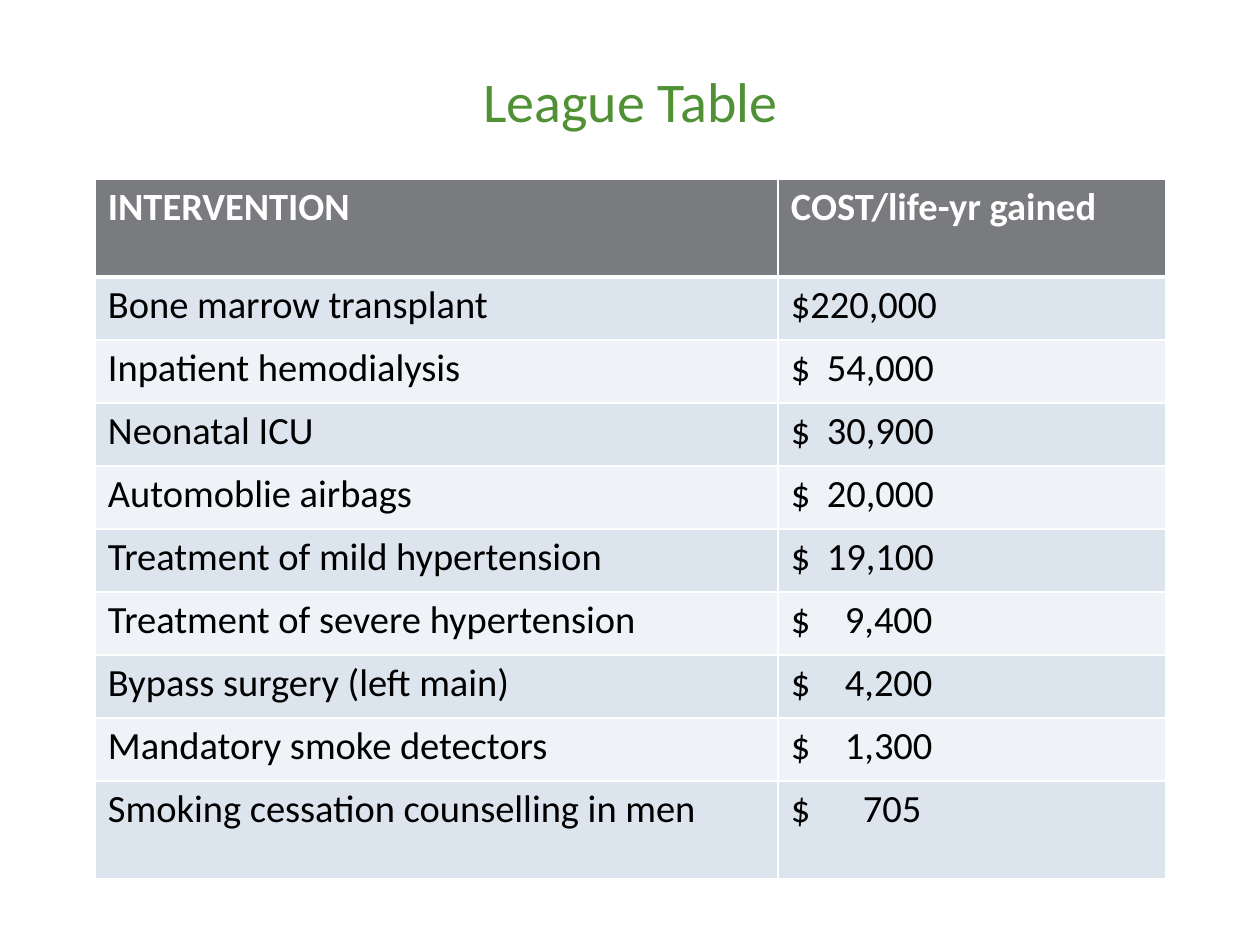
"""Build the League Table slide of cost per life-year gained."""
import pptx
import pptx.dml.color
import pptx.enum.text
import pptx.oxml
import pptx.oxml.ns
import pptx.util

SCALE = 914400 / 126
NS = pptx.oxml.ns.nsdecls("a")


def px(n):
    return pptx.util.Emu(round(n * SCALE))


def write(tf, text, size=22, color="000000", bold=False, align="LEFT", tab=None):
    p = tf.paragraphs[0]
    p.alignment = pptx.enum.text.PP_ALIGN[align]
    if tab:
        p._p.get_or_add_pPr().append(pptx.oxml.parse_xml(
            f'<a:tabLst {NS}><a:tab pos="{px(tab)}" algn="l"/></a:tabLst>'))
    r = p.add_run()
    r.text = text
    r.font.name = "Calibri"
    r.font.size = pptx.util.Pt(size)
    r.font.bold = bold
    r.font.color.rgb = pptx.dml.color.RGBColor.from_string(color)


rows = [
    ("INTERVENTION", "COST/life-yr gained"),
    ("Bone marrow transplant", "220,000"),
    ("Inpatient hemodialysis", "54,000"),
    ("Neonatal ICU", "30,900"),
    ("Automoblie airbags", "20,000"),
    ("Treatment of mild hypertension", "19,100"),
    ("Treatment of severe hypertension", "9,400"),
    ("Bypass surgery (left main)", "4,200"),
    ("Mandatory smoke detectors", "1,300"),
    ("Smoking cessation counselling in men", "705"),
]
last = len(rows) - 1

prs = pptx.Presentation()
prs.slide_width, prs.slide_height = px(1260), px(945)
s = prs.slides.add_slide(prs.slide_layouts[5])

title = s.shapes.title
title.left, title.top, title.width, title.height = px(95), px(21), px(1071), px(158)
title.text_frame.vertical_anchor = pptx.enum.text.MSO_ANCHOR.MIDDLE
write(title.text_frame, "League Table", size=32, color="519136", align="CENTER")

table = s.shapes.add_table(len(rows), 2, px(95), px(179), px(1071), px(700)).table
for column, width in zip(table.columns, (683, 388)):
    column.width = px(width)

for i, row in enumerate(rows):
    table.rows[i].height = px(98 if i in (0, last) else 63)
    fill = "797B7E" if i == 0 else ("EFF3F7", "DCE5EE")[i % 2]
    widths = {"L": 1, "R": 1, "T": 3 if i == 1 else 1, "B": 3 if i == 0 else 1}
    for j, text in enumerate(row):
        cell = table.cell(i, j)
        cell.margin_left = cell.margin_right = px(13)
        cell.margin_top = cell.margin_bottom = px(5)
        for side, width in widths.items():
            cell._tc.get_or_add_tcPr().append(pptx.oxml.parse_xml(
                f'<a:ln{side} {NS} w="{pptx.util.Pt(width)}"><a:solidFill>'
                f'<a:srgbClr val="FFFFFF"/></a:solidFill></a:ln{side}>'))
        cell.fill.solid()
        cell.fill.fore_color.rgb = pptx.dml.color.RGBColor.from_string(fill)
        tab = None
        if i and j:
            digits = len(text.replace(",", ""))
            tab = 18 * (7 - digits) if digits < 6 else None
            text = f"$\t{text}" if tab else f"${text}"
        write(cell.text_frame, text, color="000000" if i else "FFFFFF",
              bold=i == 0, tab=tab)

prs.save("out.pptx")
